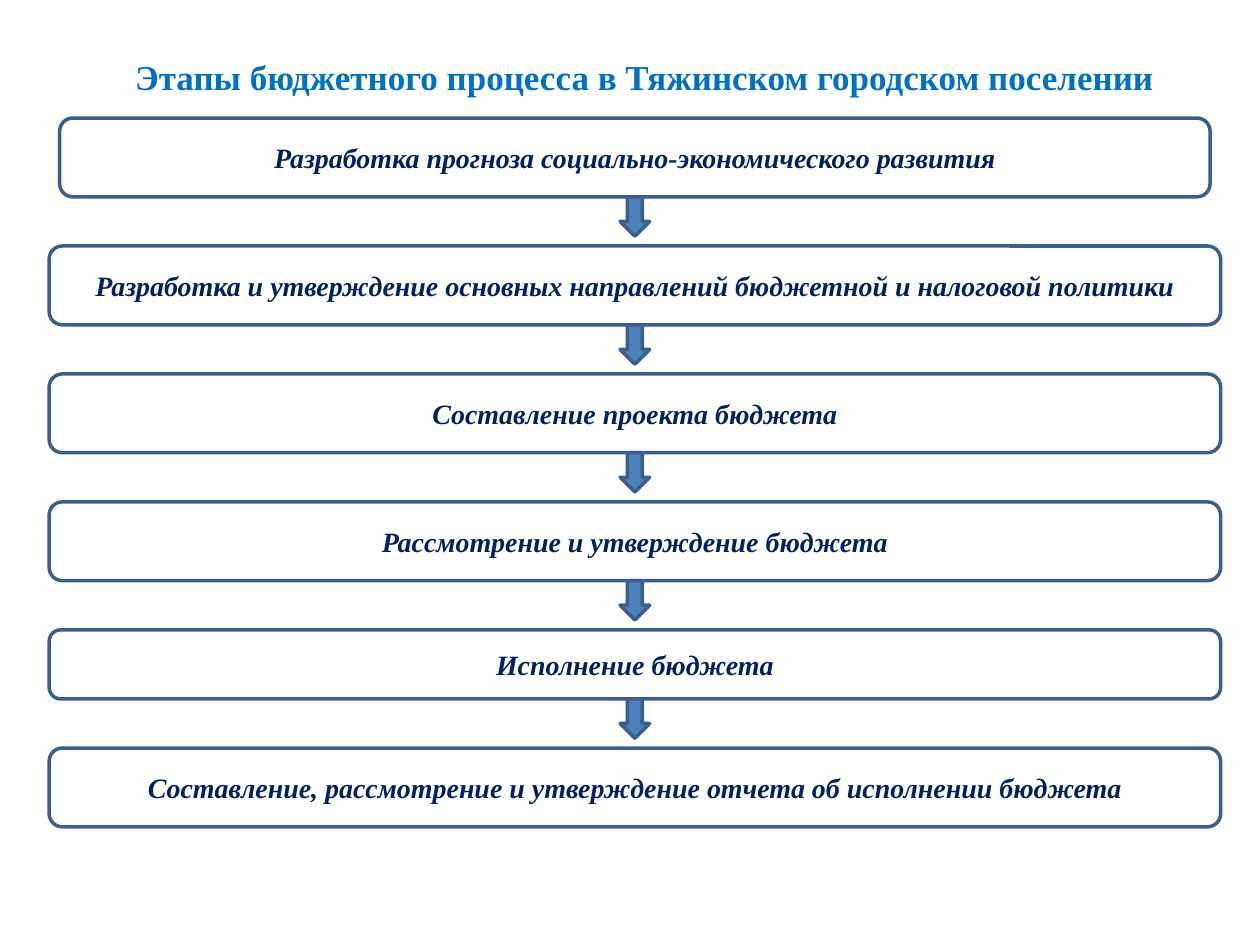
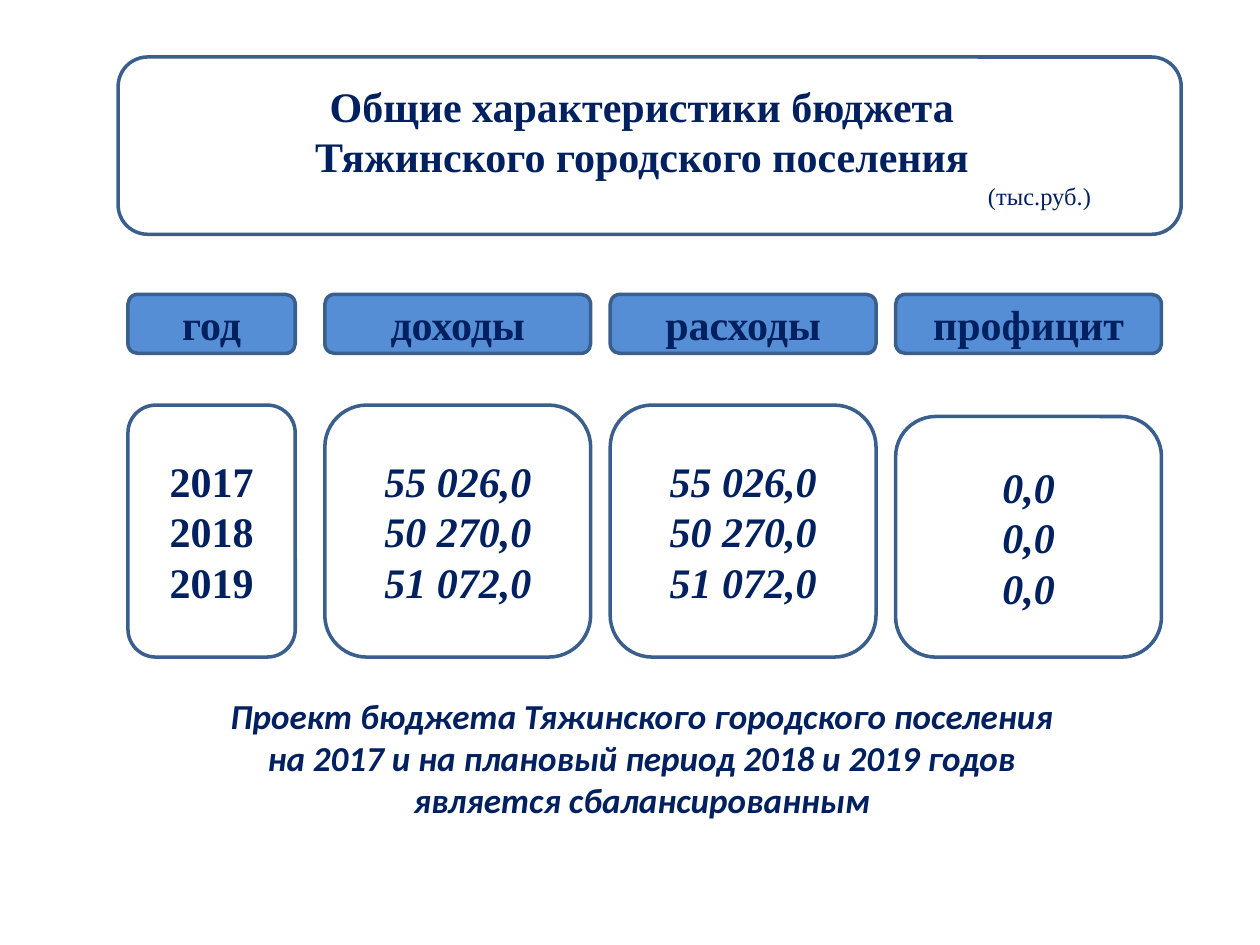
from pptx import Presentation
from pptx.dml.color import RGBColor
from pptx.enum.shapes import MSO_SHAPE
from pptx.enum.text import MSO_ANCHOR, PP_ALIGN
from pptx.util import Pt

SERIF, SANS = "Times New Roman", "Calibri"
WHITE, NAVY, TITLE_BLUE = "FFFFFF", "002060", "0070C0"
OUTLINE, ARROW_BLUE, HEADER_BLUE = "3A5F8C", "4F81BD", "558ED5"

STAGES = [
    "Разработка прогноза социально-экономического развития",
    "Разработка и утверждение основных направлений бюджетной и налоговой политики",
    "Составление проекта бюджета",
    "Рассмотрение и утверждение бюджета",
    "Исполнение бюджета",
    "Составление, рассмотрение и утверждение отчета об исполнении бюджета",
]
AMOUNTS = ["55 026,0", "50 270,0", "51 072,0"]
COLUMNS = [
    ("год", ["2017", "2018", "2019"]),
    ("доходы", AMOUNTS),
    ("расходы", AMOUNTS),
    ("профицит", ["0,0"] * 3),
]


def rgb(value):
    """Turn a hex string into a colour."""
    return RGBColor.from_string(value)


def write(tf, text, first=False, size=24, font=SERIF, color=NAVY, bold=True,
          italic=False, align=PP_ALIGN.CENTER, indent=0):
    """Write one formatted paragraph into a text frame."""
    p = tf.paragraphs[0] if first else tf.add_paragraph()
    p.alignment = align
    if indent:
        p._p.get_or_add_pPr().set("marL", str(Pt(indent)))
    r = p.add_run()
    r.text = text
    r.font.size, r.font.name = Pt(size), font
    r.font.bold, r.font.italic = bold, italic
    r.font.color.rgb = rgb(color)


def add_text(s, box, text, inset=7.2, **fmt):
    """Add a wrapping text box with one paragraph."""
    tf = s.shapes.add_textbox(*map(Pt, box)).text_frame
    tf.word_wrap = True
    tf.margin_left = tf.margin_right = Pt(inset)
    write(tf, text, first=True, **fmt)


def add_panel(s, box, lines=(), kind=MSO_SHAPE.ROUNDED_RECTANGLE, fill=WHITE, **fmt):
    """Add an outlined shape with centred lines and return its text frame."""
    sp = s.shapes.add_shape(kind, *map(Pt, box))
    sp.shadow.inherit = False
    sp.fill.solid()
    sp.fill.fore_color.rgb = rgb(fill)
    sp.line.color.rgb = rgb(OUTLINE)
    sp.line.width = Pt(2)
    tf = sp.text_frame
    tf.word_wrap = True
    tf.vertical_anchor = MSO_ANCHOR.MIDDLE
    for i, line in enumerate(lines):
        write(tf, line, first=i == 0, **fmt)
    return tf


def add_stage_chain(s, left, top, width):
    """Stack the budget stages, joined by down arrows."""
    gap, arrow_w, arrow_h = 28.1, 16.9, 22.5
    last = len(STAGES) - 1
    for i, stage in enumerate(STAGES):
        inset = 6 if i == 0 else 0
        height = 39.5 if i == 4 else 45
        add_panel(s, (left + inset, top, width - 2 * inset, height), [stage],
                  size=16, italic=True)
        top += height
        if i < last:
            add_panel(s, (left + (width - arrow_w) / 2, top, arrow_w, arrow_h),
                      kind=MSO_SHAPE.DOWN_ARROW, fill=ARROW_BLUE)
        top += gap


def add_heading_panel(s, box):
    """Add the framed heading with its unit of measure."""
    tf = add_panel(s, box, ["Общие характеристики бюджета",
                            "Тяжинского городского поселения"])
    tf.margin_right = Pt(16)
    write(tf, "(тыс.руб.)", size=14, bold=False, align=PP_ALIGN.LEFT, indent=485)


def add_budget_columns(s, left, top):
    """Place a header and a value panel for each budget column."""
    year_w, amount_w, amount_offset, pitch = 95.6, 151.9, 112.5, 163.1
    body_offset, body_h = 63.3, 144
    for i, (header, values) in enumerate(COLUMNS):
        x = left + (amount_offset + (i - 1) * pitch if i else 0)
        width = amount_w if i else year_w
        drop = 6.5 if header == "профицит" else 0
        add_panel(s, (x, top, width, 33.8), [header], fill=HEADER_BLUE)
        add_panel(s, (x, top + body_offset + drop, width, body_h - drop), values,
                  italic=i > 0)


def build_stages_slide(prs):
    """Build the slide on the stages of the budget process."""
    s = prs.slides.add_slide(prs.slide_layouts[6])
    add_text(s, (45, 28.1, 646.5, 31.5),
             "Этапы бюджетного процесса в Тяжинском городском поселении",
             size=20, color=TITLE_BLUE)
    add_stage_chain(s, 28.1, 67.5, 669.4)


def build_totals_slide(prs):
    """Build the slide on the overall budget figures."""
    s = prs.slides.add_slide(prs.slide_layouts[6])
    add_heading_panel(s, (67.5, 32.6, 607.5, 101.3))
    add_budget_columns(s, 73.1, 168.2)
    add_text(s, (111.6, 393.2, 510.5, 80),
             "Проект бюджета Тяжинского городского поселения на 2017 и на "
             "плановый период 2018 и 2019 годов является сбалансированным",
             inset=15, size=20, font=SANS, italic=True)


def main():
    """Build and save the presentation."""
    prs = Presentation()
    prs.slide_width, prs.slide_height = Pt(720), Pt(540)
    build_stages_slide(prs)
    build_totals_slide(prs)
    prs.save("out.pptx")


if __name__ == "__main__":
    main()
